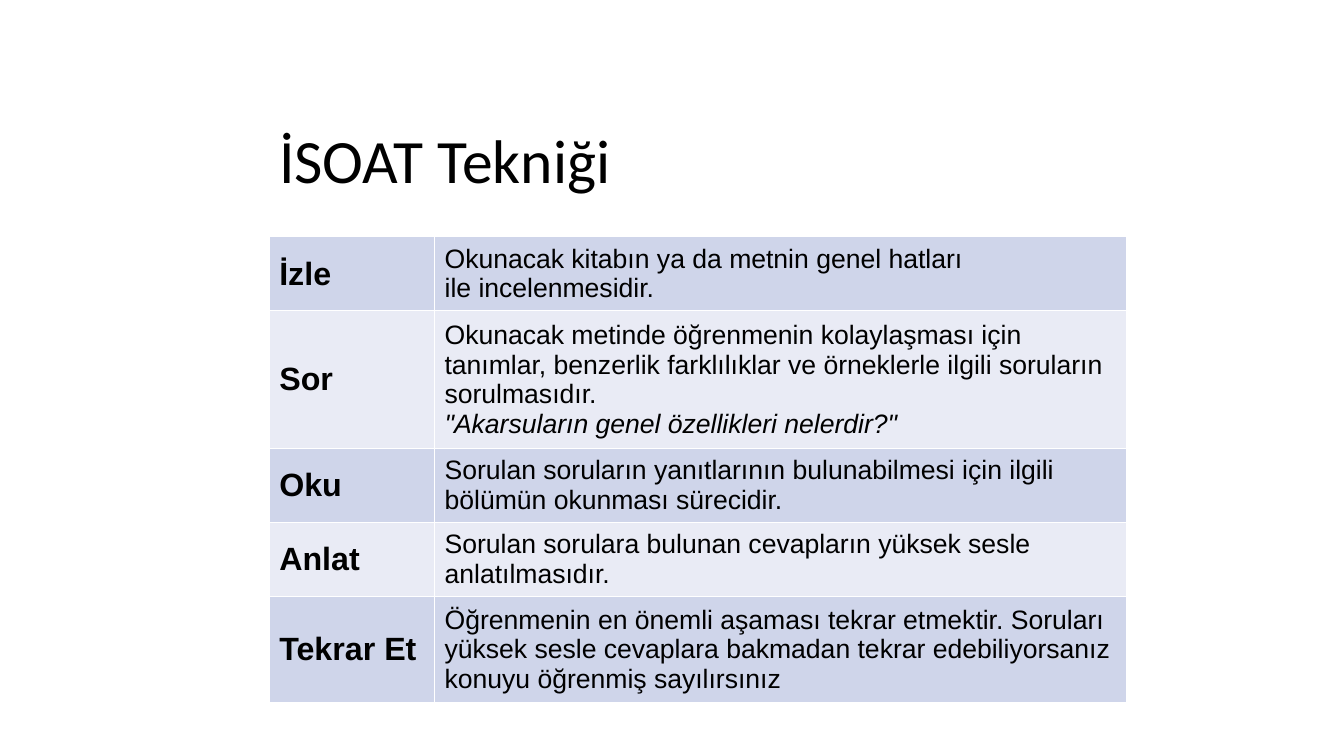
import dataclasses

import pptx
import pptx.dml.color
import pptx.enum.text
import pptx.oxml
import pptx.oxml.ns
import pptx.util

Inches = pptx.util.Inches
Pt = pptx.util.Pt


@dataclasses.dataclass(frozen=True)
class Theme:
    title_font: str = "Calibri"
    body_font: str = "Arial"
    title_size: float = 44
    step_size: float = 23
    body_size: float = 19
    text: str = "000000"
    border: str = "FFFFFF"
    bands: tuple = ("CFD5EA", "E9EBF5")


# Each step: name, row height, paragraphs as (text, italic)
STEPS = [
    ("İzle", 0.71, [
        ("Okunacak kitabın ya da metnin genel hatları", False),
        ("ile incelenmesidir.", False)]),
    ("Sor", 1.32, [
        ("Okunacak metinde öğrenmenin kolaylaşması için tanımlar, benzerlik "
         "farklılıklar ve örneklerle ilgili soruların sorulmasıdır.", False),
        ('"Akarsuların genel özellikleri nelerdir?"', True)]),
    ("Oku", 0.71, [
        ("Sorulan soruların yanıtlarının bulunabilmesi için ilgili bölümün "
         "okunması sürecidir.", False)]),
    ("Anlat", 0.71, [
        ("Sorulan sorulara bulunan cevapların yüksek sesle anlatılmasıdır.", False)]),
    ("Tekrar Et", 1.01, [
        ("Öğrenmenin en önemli aşaması tekrar etmektir. Soruları yüksek sesle "
         "cevaplara bakmadan tekrar edebiliyorsanız konuyu öğrenmiş sayılırsınız", False)]),
]
COLUMN_WIDTHS = (1.64, 6.86)


class SlideBuilder:
    def __init__(self, slide, theme):
        self.slide = slide
        self.theme = theme

    def style(self, para, font, size, bold=False, italic=False):
        for span in para.runs:
            span.font.name = font
            span.font.size = Pt(size)
            span.font.bold = bold
            span.font.italic = italic
            span.font.color.rgb = pptx.dml.color.RGBColor.from_string(self.theme.text)

    def title(self, text, left, top, width, height):
        box = self.slide.shapes.add_textbox(
            Inches(left), Inches(top), Inches(width), Inches(height))
        frame = box.text_frame
        frame.word_wrap = True
        frame.vertical_anchor = pptx.enum.text.MSO_ANCHOR.MIDDLE
        frame.text = text
        para = frame.paragraphs[0]
        para.line_spacing = 0.9
        self.style(para, self.theme.title_font, self.theme.title_size)

    def cell(self, cell, paragraphs, size, bold, fill):
        # Borders come before the fill in the cell properties
        properties = cell._tc.get_or_add_tcPr()
        for side in ("lnL", "lnR", "lnT", "lnB"):
            properties.append(pptx.oxml.parse_xml(
                f'<a:{side} {pptx.oxml.ns.nsdecls("a")} w="{Pt(1)}"><a:solidFill>'
                f'<a:srgbClr val="{self.theme.border}"/></a:solidFill></a:{side}>'))
        cell.fill.solid()
        cell.fill.fore_color.rgb = pptx.dml.color.RGBColor.from_string(fill)
        cell.vertical_anchor = pptx.enum.text.MSO_ANCHOR.MIDDLE
        frame = cell.text_frame
        frame.text = "\n".join(text for text, _ in paragraphs)
        for para, (_, italic) in zip(frame.paragraphs, paragraphs):
            self.style(para, self.theme.body_font, size, bold, italic)

    def step_table(self, steps, widths, left, top):
        heights = [height for _, height, _ in steps]
        table = self.slide.shapes.add_table(
            len(steps), len(widths), Inches(left), Inches(top),
            Inches(sum(widths)), Inches(sum(heights))).table
        table.first_row = False
        table.horz_banding = False
        for column, width in zip(table.columns, widths):
            column.width = Inches(width)
        for index, (name, height, paragraphs) in enumerate(steps):
            table.rows[index].height = Inches(height)
            fill = self.theme.bands[index % 2]
            self.cell(table.cell(index, 0), [(name, False)],
                      self.theme.step_size, True, fill)
            self.cell(table.cell(index, 1), paragraphs,
                      self.theme.body_size, False, fill)


def main():
    deck = pptx.Presentation()
    deck.slide_width = Inches(13.33)
    deck.slide_height = Inches(7.5)
    page = SlideBuilder(deck.slides.add_slide(deck.slide_layouts[6]), Theme())

    # Heading
    page.title("İSOAT Tekniği", 2.67, 0.9, 11.5, 1.45)

    # Steps of the technique
    page.step_table(STEPS, COLUMN_WIDTHS, 2.67, 2.35)

    deck.save("out.pptx")


if __name__ == "__main__":
    main()
